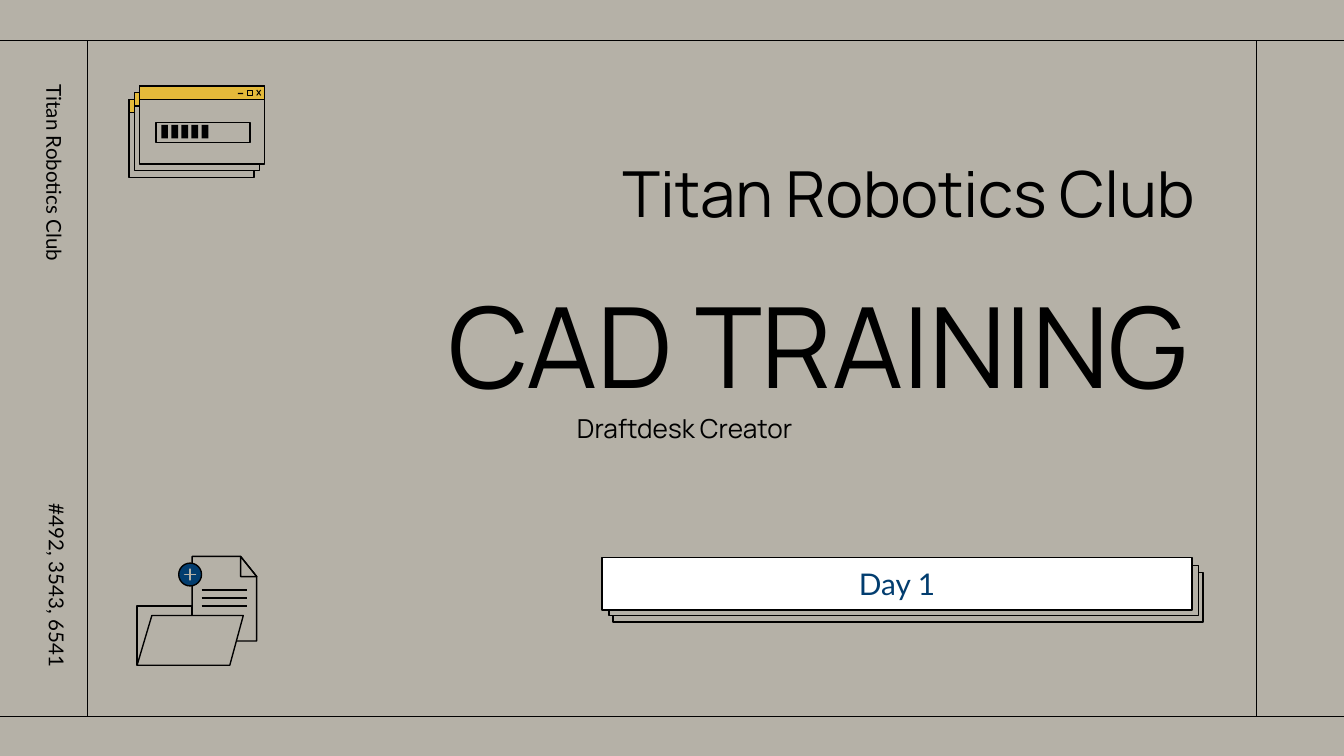
from lxml import etree
from pptx import Presentation
from pptx.dml.color import RGBColor
from pptx.enum.shapes import MSO_CONNECTOR, MSO_SHAPE
from pptx.enum.text import MSO_ANCHOR as Anchor, PP_ALIGN as Align
from pptx.oxml.ns import qn
from pptx.util import Inches, Pt

BLACK, STONE, WHITE = "000000", "B5B1A7", "FFFFFF"
NAVY, GOLD = "023D6F", "E4BA3A"
LINE_WIDTH = 0.75


def color(value):
    return RGBColor.from_string(value)


def paint(shape, fill=None, line=BLACK, line_width=LINE_WIDTH):
    shape.shadow.inherit = False
    if fill:
        shape.fill.solid()
        shape.fill.fore_color.rgb = color(fill)
    else:
        shape.fill.background()
    if line:
        shape.line.color.rgb = color(line)
        shape.line.width = Pt(line_width)
    else:
        shape.line.fill.background()
    return shape


def add_preset(slide, left, top, width, height, kind=MSO_SHAPE.RECTANGLE, **style):
    box = [Inches(value) for value in (left, top, width, height)]
    return paint(slide.shapes.add_shape(kind, *box), **style)


def add_outline(slide, left, top, points, **style):
    """Closed polygon whose points are relative to left, top."""
    corners = [(Inches(left + x), Inches(top + y)) for x, y in points]
    builder = slide.shapes.build_freeform(*corners[0], scale=1.0)
    builder.add_line_segments(corners[1:], close=True)
    return paint(builder.convert_to_shape(), **style)


def add_line(slide, x1, y1, x2, y2, line_width=LINE_WIDTH):
    ends = [Inches(value) for value in (x1, y1, x2, y2)]
    line = slide.shapes.add_connector(MSO_CONNECTOR.STRAIGHT, *ends)
    line.line.color.rgb = color(BLACK)
    line.line.width = Pt(line_width)
    etree.SubElement(line._element.spPr, qn("a:effectLst"))


def write(shape, text, size, font="Manrope", ink=BLACK, align=Align.LEFT,
          anchor=Anchor.MIDDLE, inset=0.1, right_inset=0.1, spacing=None):
    frame = shape.text_frame
    frame.word_wrap = True
    frame.vertical_anchor = anchor
    frame.margin_left = frame.margin_top = frame.margin_bottom = Inches(inset)
    frame.margin_right = Inches(right_inset)
    paragraph = frame.paragraphs[0]
    paragraph.alignment = align
    paragraph.line_spacing = spacing
    run = paragraph.add_run()
    run.text = text
    run.font.name = font
    run.font.size = Pt(size)
    run.font.color.rgb = color(ink)


def add_text(slide, left, top, width, height, text, size, rotation=0, **style):
    box = slide.shapes.add_textbox(*[Inches(v) for v in (left, top, width, height)])
    box.rotation = rotation
    write(box, text, size, **style)


def add_frame(slide, left, top, width, height, bleed=0.65):
    """Two upright rules between horizontal rules that run to the slide edges."""
    right, bottom = left + width, top + height
    for y in (top, bottom):
        add_line(slide, left - bleed, y, right + bleed, y)
    for x in (left, right):
        add_line(slide, x, bottom, x, top)


def add_day_button(slide, left, top, width, height, text):
    for dx, dy in ((0.08, 0.11), (0.05, 0.06)):
        add_preset(slide, left + dx, top + dy, width, height - 0.02, fill=STONE)
    button = add_preset(slide, left, top, width, height, fill=WHITE)
    write(button, text, 16, font="Lato", ink=NAVY, align=Align.CENTER)


def add_window_controls(slide, right, middle):
    add_preset(slide, right - 0.2, middle, 0.04, 0.01, fill=BLACK, line=None)
    add_preset(slide, right - 0.13, middle - 0.02, 0.04, 0.04, line_width=0.5)
    for rise in (-0.02, 0.02):
        add_line(slide, right - 0.06, middle - rise, right - 0.03, middle + rise, 0.5)


def add_window_stack(slide, left, top, width, height):
    for step in range(3):
        x, y = left + 0.04 * step, top - 0.05 * step
        add_preset(slide, x, y, width, height, fill=STONE)
        add_preset(slide, x, y, width, 0.1, fill=GOLD)
    add_window_controls(slide, x + width, y + 0.05)
    bar_left, bar_top = left + 0.2, top + 0.17
    add_preset(slide, bar_left, bar_top, 0.7, 0.15)
    for index in range(5):
        add_preset(slide, bar_left + 0.04 + 0.3 / 4 * index, bar_top + 0.02,
                   0.05, 0.1, fill=BLACK, line=None)


def add_folder(slide, left, top):
    add_preset(slide, left, top + 0.37, 0.41, 0.44, fill=STONE)
    page = [(0.41, 0), (0.41, 0.63), (0.89, 0.63), (0.89, 0.15), (0.77, 0)]
    fold = [(0.77, 0), (0.77, 0.15), (0.89, 0.15)]
    flap = [(0.11, 0.44), (0, 0.81), (0.69, 0.81), (0.79, 0.44)]
    for points, fill in ((page, None), (fold, None), (flap, STONE)):
        add_outline(slide, left, top, points, fill=fill)
    for row in range(3):
        y = top + 0.25 + 0.06 * row
        add_line(slide, left + 0.48, y, left + 0.82, y)
    add_preset(slide, left + 0.31, top + 0.05, 0.17, 0.17, MSO_SHAPE.OVAL, fill=NAVY)
    plus = add_preset(slide, left + 0.34, top + 0.08, 0.11, 0.11,
                      MSO_SHAPE.MATH_PLUS, fill=STONE, line=STONE)
    plus.adjustments[0] = 0


def add_titles(slide, left, top, right):
    add_text(slide, left + 1.04, top, right - left - 1.04, 1.12,
             "Titan Robotics Club", 34, align=Align.RIGHT, right_inset=0.11)
    add_text(slide, left, top + 1.22, right - left - 0.05, 0.93,
             "CAD TRAINING", 60, align=Align.RIGHT, right_inset=0.11)
    add_text(slide, left - 0.31, top + 2.15, 7.79, 0.64, "Draftdesk Creator", 14,
             align=Align.CENTER, anchor=Anchor.TOP, inset=0.05, right_inset=0.05)


def add_side_labels(slide):
    add_text(slide, -0.74, 1.58, 2.32, 0.22, "Titan Robotics Club", 11,
             rotation=90, font="Lato", spacing=1.15)
    add_text(slide, -0.61, 3.96, 2.07, 0.22, "#492, 3543, 6541", 11,
             rotation=90, font="Lato", align=Align.RIGHT, right_inset=0.14)


def main():
    presentation = Presentation()
    presentation.slide_width = Inches(10)
    presentation.slide_height = presentation.slide_width * 9 // 16
    slide = presentation.slides.add_slide(presentation.slide_layouts[6])
    slide.background.fill.solid()
    slide.background.fill.fore_color.rgb = color(STONE)
    add_frame(slide, 0.65, 0.3, 8.7, 5.03)
    add_titles(slide, 1.51, 0.87, 9)
    add_day_button(slide, 4.48, 4.15, 4.39, 0.39, "Day 1")
    add_folder(slide, 1.02, 4.14)
    add_window_stack(slide, 0.96, 0.74, 0.93, 0.58)
    add_side_labels(slide)
    presentation.save("out.pptx")


if __name__ == "__main__":
    main()
